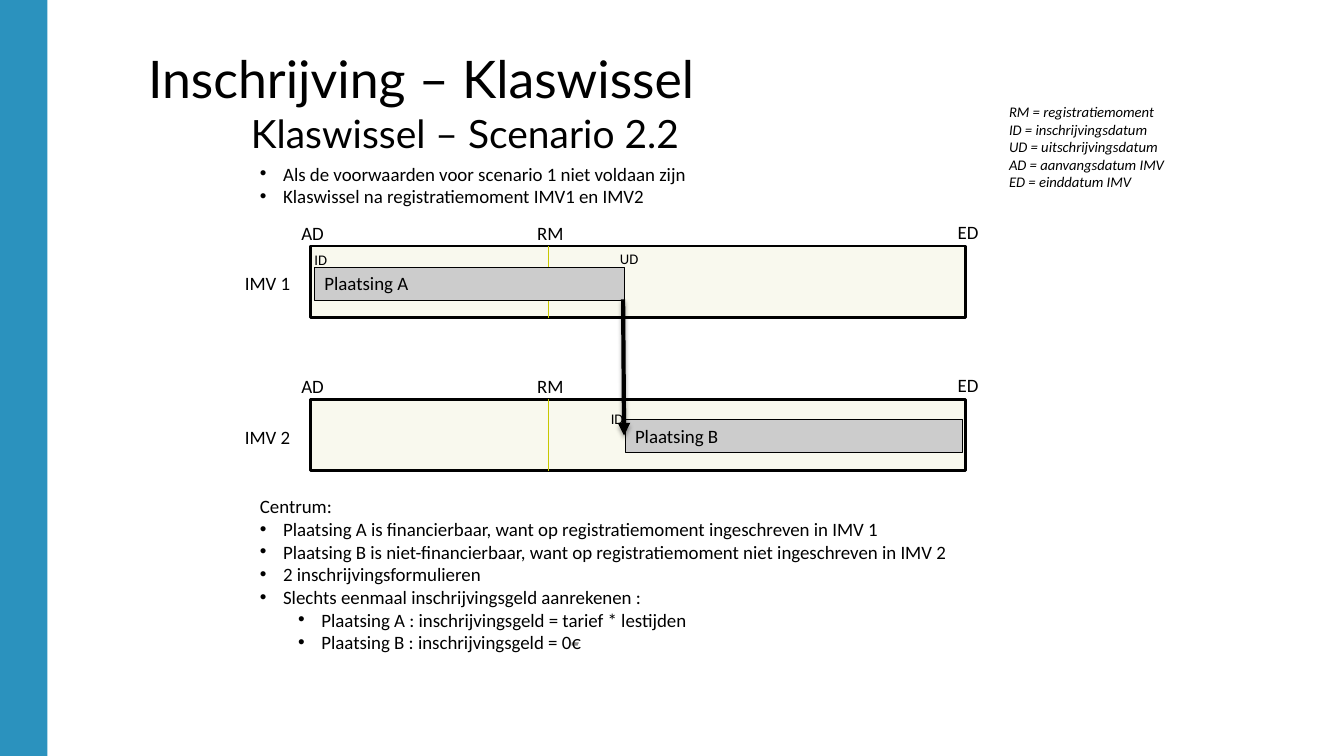
from dataclasses import dataclass

from lxml import etree
from pptx import Presentation
from pptx.dml.color import RGBColor
from pptx.enum.shapes import MSO_CONNECTOR, MSO_SHAPE
from pptx.enum.text import MSO_ANCHOR, MSO_AUTO_SIZE
from pptx.oxml import parse_xml
from pptx.oxml.ns import nsdecls, qn
from pptx.util import Inches, Pt

RECTANGLE = MSO_SHAPE.RECTANGLE
STRAIGHT = MSO_CONNECTOR.STRAIGHT
TOP = MSO_ANCHOR.TOP
NO_AUTOFIT = MSO_AUTO_SIZE.NONE

COLORS = {
    "side band": "2B92BE",
    "period": "F9F9EE",
    "placement": "CCCCCC",
    "moment": "C8C800",
    "ink": "000000",
}
BODY_FONT, HEADING_FONT = "Calibri", "Lato"
BODY_SIZE, SMALL_SIZE = 13.5, 10.5
PERIOD_LEFT, PERIOD_WIDTH, PERIOD_HEIGHT = 3.08, 6.5, 0.71
MOMENT_X = 5.44


@dataclass
class Line:
    text: str
    level: int = 0  # 0 is plain, 1 and 2 are bullet levels


@dataclass
class Timeline:
    name: str
    top: float


@dataclass
class Placement:
    name: str
    left: float
    top: float
    width: float


@dataclass
class Label:
    text: str
    left: float
    top: float
    width: float


BULLET_INDENTS = {1: 0.23, 2: 0.61}
TIMELINES = [Timeline("IMV 1", 2.44), Timeline("IMV 2", 3.96)]
PLACEMENTS = [
    Placement("Plaatsing A", 3.12, 2.65, 3.07),
    Placement("Plaatsing B", 6.2, 4.16, 3.35),
]
# Tops are relative to the top of the timeline
TIMELINE_LABELS = [
    Label("RM", 5.23, -0.29, 0.47),
    Label("AD", 2.89, -0.29, 0.43),
    Label("ED", 9.4, -0.3, 0.41),
]
DATE_LABELS = [
    Label("UD", 6.05, 2.43, 0.42),
    Label("ID", 3.02, 2.44, 0.43),
    Label("ID", 5.96, 4.02, 0.43),
]
CONDITIONS = [
    Line("Als de voorwaarden voor scenario 1 niet voldaan zijn", 1),
    Line("Klaswissel na registratiemoment IMV1 en IMV2", 1),
]
LEGEND = [
    Line("RM = registratiemoment"),
    Line("ID = inschrijvingsdatum"),
    Line("UD = uitschrijvingsdatum"),
    Line("AD = aanvangsdatum IMV"),
    Line("ED = einddatum IMV"),
]
CONCLUSIONS = [
    Line("Centrum:"),
    Line("Plaatsing A is financierbaar, want op registratiemoment ingeschreven in IMV 1", 1),
    Line("Plaatsing B is niet-financierbaar, want op registratiemoment niet ingeschreven in IMV 2", 1),
    Line("2 inschrijvingsformulieren", 1),
    Line("Slechts eenmaal inschrijvingsgeld aanrekenen :", 1),
    Line("Plaatsing A : inschrijvingsgeld = tarief * lestijden", 2),
    Line("Plaatsing B : inschrijvingsgeld = 0€", 2),
]


def color(name: str) -> RGBColor:
    return RGBColor.from_string(COLORS[name])


def set_bullet(para, level: int) -> None:
    properties = para._p.get_or_add_pPr()
    properties.set("lvl", str(level - 1))
    properties.set("marL", str(Inches(BULLET_INDENTS[level])))
    properties.set("indent", str(Inches(-0.23)))
    etree.SubElement(properties, qn("a:buFont")).set("typeface", "Arial")
    etree.SubElement(properties, qn("a:buChar")).set("char", "•")


def write_lines(frame, lines: list[Line], *, size: float = BODY_SIZE,
                font: str = BODY_FONT, italic: bool = False, wrap: bool = True) -> None:
    frame.word_wrap = wrap
    frame.auto_size = NO_AUTOFIT
    frame.vertical_anchor = TOP
    for index, line in enumerate(lines):
        para = frame.add_paragraph() if index else frame.paragraphs[0]
        if line.level:
            set_bullet(para, line.level)
        span = para.add_run()
        span.text = line.text
        span.font.name = font
        span.font.size = Pt(size)
        span.font.italic = italic
        span.font.color.rgb = color("ink")


def add_text(page, left: float, top: float, width: float, height: float,
             lines: list[Line], **text_format) -> None:
    box = page.shapes.add_textbox(Inches(left), Inches(top), Inches(width), Inches(height))
    write_lines(box.text_frame, lines, **text_format)


def add_bar(page, left: float, top: float, width: float, height: float,
            fill: str, line_width: float = 0):
    bar = page.shapes.add_shape(RECTANGLE, Inches(left), Inches(top), Inches(width), Inches(height))
    bar.shadow.inherit = False
    bar.fill.solid()
    bar.fill.fore_color.rgb = color(fill)
    if line_width:
        bar.line.color.rgb = color("ink")
        bar.line.width = Pt(line_width)
    else:
        bar.line.fill.background()
    return bar


def add_line(page, start: tuple[float, float], end: tuple[float, float],
             line_color: str, line_width: float):
    line = page.shapes.add_connector(STRAIGHT, *map(Inches, start + end))
    line.line.color.rgb = color(line_color)
    line.line.width = Pt(line_width)
    etree.SubElement(line._element.spPr, qn("a:effectLst"))
    return line


def add_timeline(page, timeline: Timeline) -> None:
    top = timeline.top
    add_bar(page, PERIOD_LEFT, top, PERIOD_WIDTH, PERIOD_HEIGHT, "period", 2)
    add_line(page, (MOMENT_X, top), (MOMENT_X, top + PERIOD_HEIGHT), "moment", 0.75)
    for label in [*TIMELINE_LABELS, Label(timeline.name, 2.33, 0.21, 0.66)]:
        add_text(page, label.left, top + label.top, label.width, 0.33,
                 [Line(label.text)], wrap=False)


def add_placement(page, placement: Placement) -> None:
    bar = add_bar(page, placement.left, placement.top, placement.width, 0.33, "placement", 0.75)
    write_lines(bar.text_frame, [Line(placement.name)])
    bar.text_frame.paragraphs[0].alignment = 1


def add_switch_arrow(page) -> None:
    """Draw the shadowed arrow from placement A to placement B."""
    arrow = add_line(page, (6.18, 2.97), (6.19, 4.32), "ink", 3)
    etree.SubElement(arrow.line._get_or_add_ln(), qn("a:tailEnd")).set("type", "triangle")
    shadow = parse_xml(
        f'<a:outerShdw {nsdecls("a")} blurRad="{Pt(3.1)}" dist="{Pt(1.8)}" dir="5400000" '
        f'rotWithShape="0"><a:srgbClr val="{COLORS["ink"]}"><a:alpha val="35000"/>'
        '</a:srgbClr></a:outerShdw>')
    arrow._element.spPr.find(qn("a:effectLst")).append(shadow)


def main() -> None:
    deck = Presentation()
    deck.slide_width, deck.slide_height = Inches(13.33), Inches(7.5)
    page = deck.slides.add_slide(deck.slide_layouts[6])

    add_bar(page, 0, 0, 0.47, 7.5, "side band")
    for timeline in TIMELINES:
        add_timeline(page, timeline)
    add_text(page, 2.48, 1.56, 5.32, 0.56, CONDITIONS)
    add_text(page, 9.91, 0.97, 2.9, 0.98, LEGEND, size=SMALL_SIZE, italic=True)
    for placement in PLACEMENTS:
        add_placement(page, placement)
    add_switch_arrow(page)
    add_text(page, 2.48, 4.86, 7.24, 1.92, CONCLUSIONS)
    for label in DATE_LABELS:
        add_text(page, label.left, label.top, label.width, 0.28, [Line(label.text)], size=SMALL_SIZE)
    add_text(page, 2.39, 1.04, 8.21, 0.37, [Line("Klaswissel – Scenario 2.2")],
             size=27.8, font=HEADING_FONT)
    add_text(page, 1.37, 0.41, 11.36, 1.22, [Line("Inschrijving – Klaswissel")],
             size=37, font=HEADING_FONT)
    deck.save("out.pptx")


if __name__ == "__main__":
    main()
